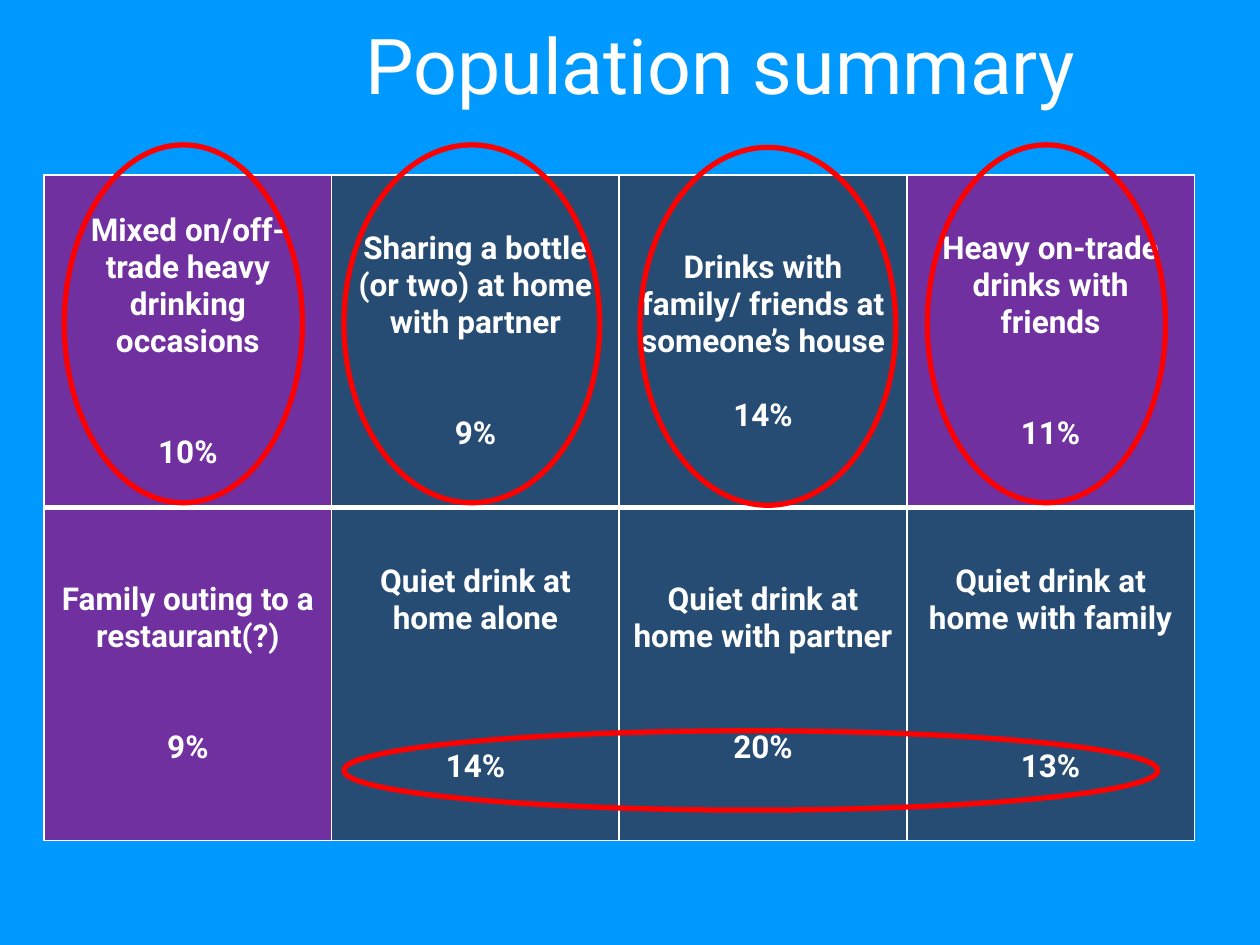
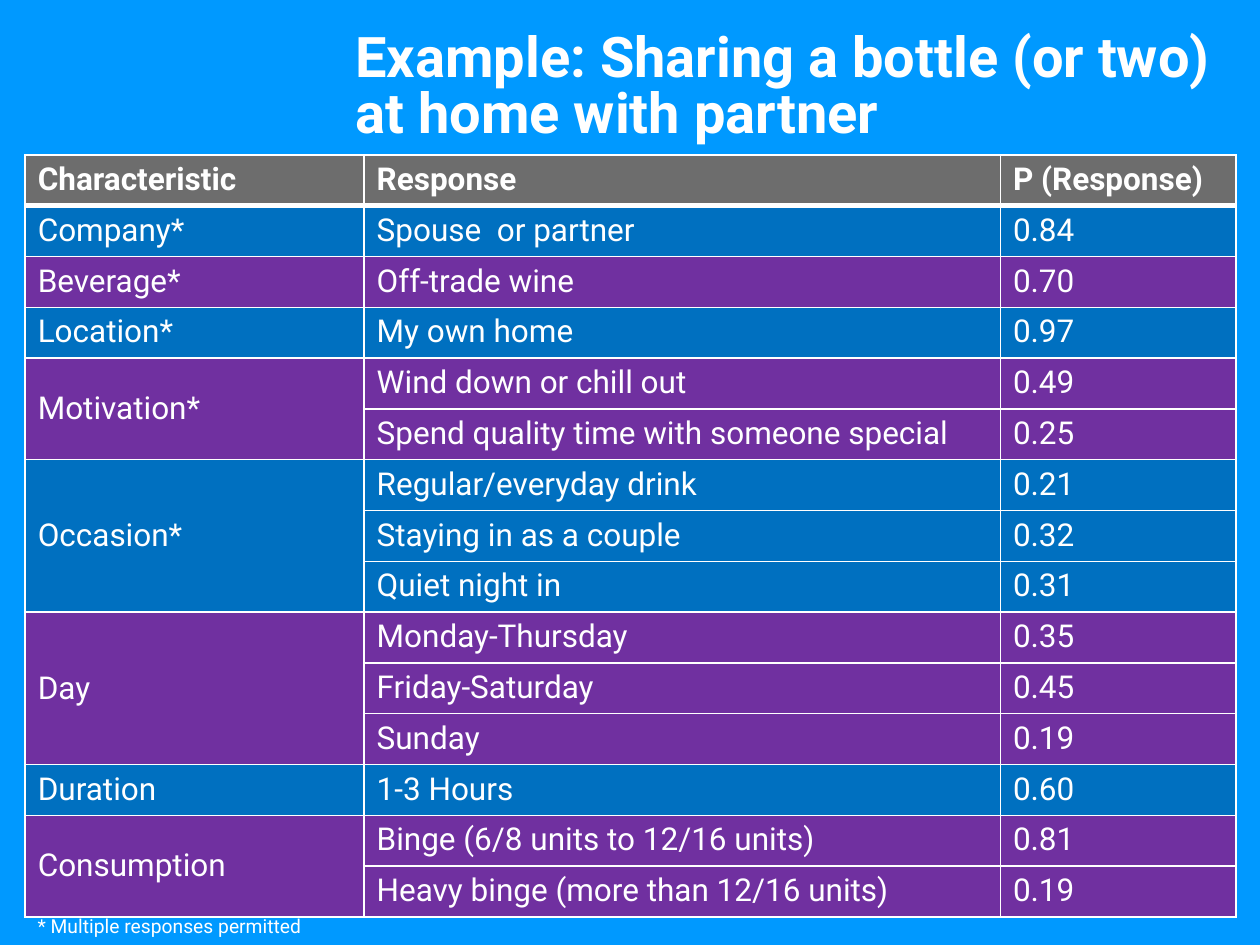
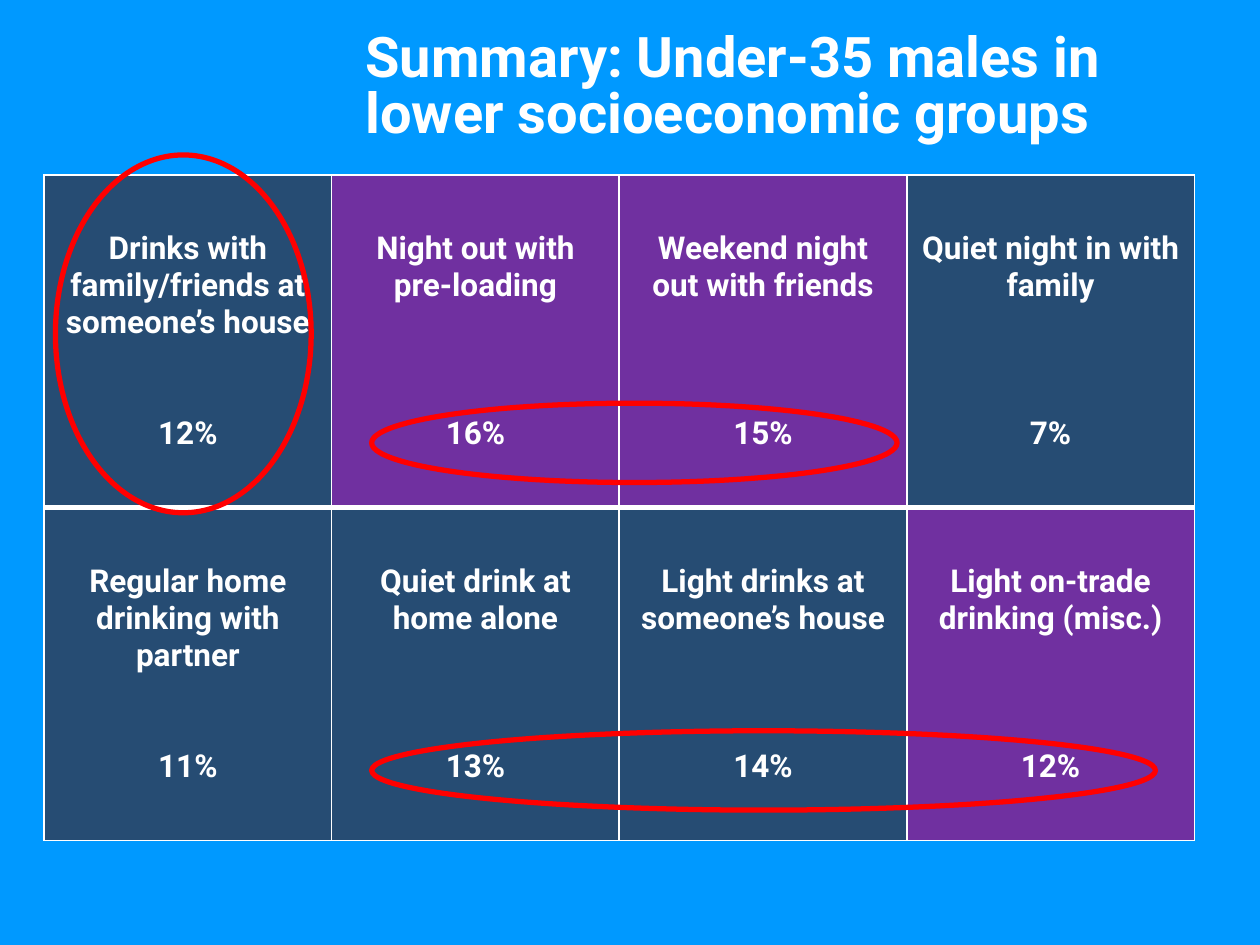
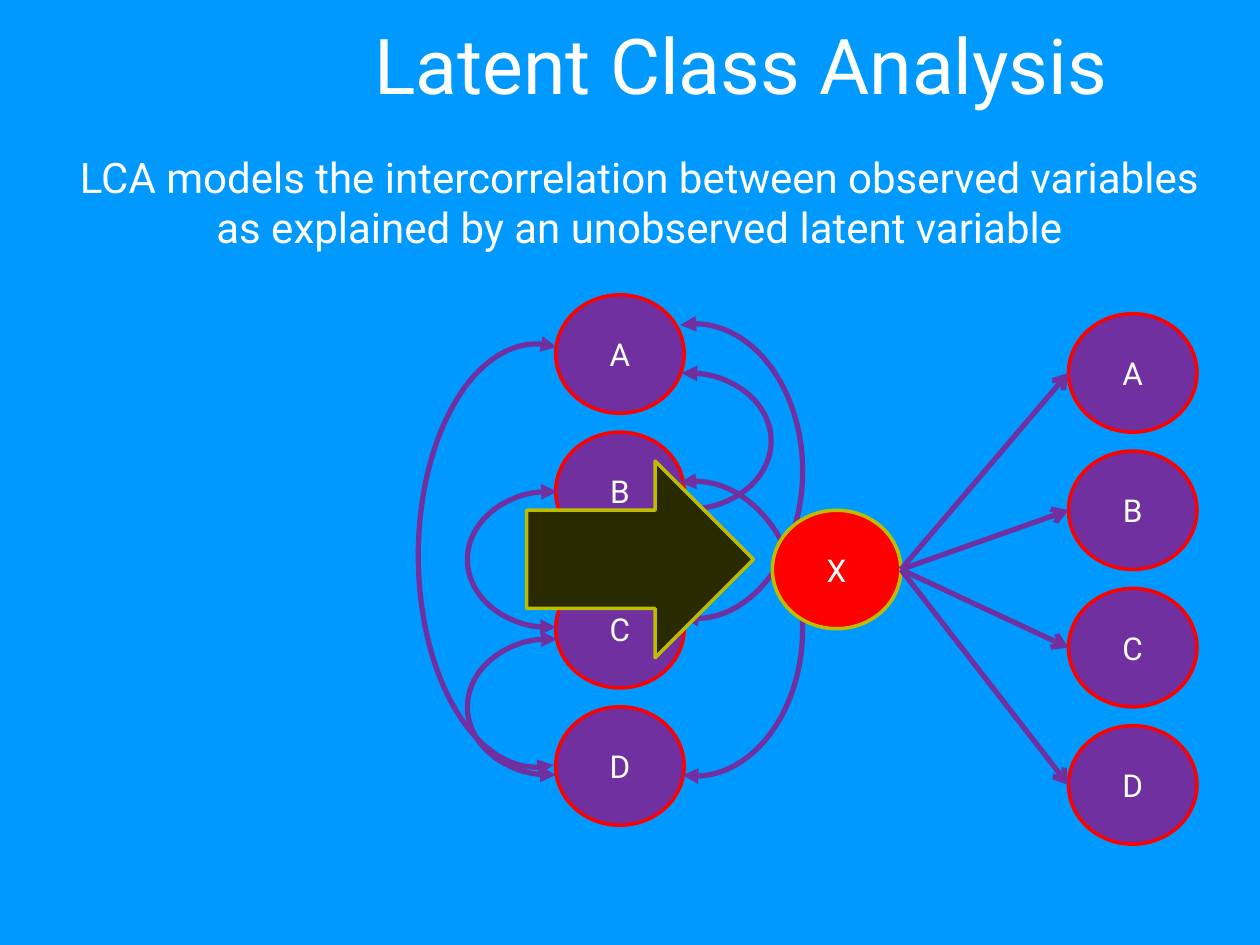
import lxml.etree
import pptx
import pptx.dml.color
import pptx.enum.shapes
import pptx.enum.text
import pptx.oxml.ns
import pptx.util

RGBColor = pptx.dml.color.RGBColor
SKY = RGBColor(0x00, 0x99, 0xFF)
WHITE = RGBColor(0xFF, 0xFF, 0xFF)
PURPLE = RGBColor(0x70, 0x30, 0xA0)
NAVY = RGBColor(0x26, 0x4C, 0x73)
BLUE = RGBColor(0x00, 0x70, 0xC0)
GREY = RGBColor(0x6D, 0x6D, 0x6D)
RED = RGBColor(0xFF, 0x00, 0x00)
OLIVE = RGBColor(0xBD, 0xBD, 0x00)
DARK_OLIVE = RGBColor(0x2A, 0x2A, 0x00)
FONT = "Roboto"
BODY_SIZE = 18
LINE_PITCH = 21.1

SHAPE = pptx.enum.shapes.MSO_SHAPE
ALIGN = pptx.enum.text.PP_ALIGN
ANCHOR = pptx.enum.text.MSO_ANCHOR
qn = pptx.oxml.ns.qn

prs = pptx.Presentation()
prs.slide_width = pptx.util.Inches(10)
prs.slide_height = pptx.util.Inches(7.5)
UNIT = prs.slide_width // 1000
background = prs.slide_master.background.fill
background.solid()
background.fore_color.rgb = SKY


def write(paragraph, text, size=BODY_SIZE, bold=False, align=ALIGN.LEFT):
    paragraph.alignment = align
    run = paragraph.add_run()
    run.text = text
    run.font.name = FONT
    run.font.size = pptx.util.Pt(size)
    run.font.bold = bold
    run.font.color.rgb = WHITE


def draw(slide, kind, area, line, width, fill=None):
    shape = slide.shapes.add_shape(kind, *(v * UNIT for v in area))
    shape.shadow.inherit = False
    shape.line.color.rgb = line
    shape.line.width = pptx.util.Pt(width)
    if fill is None:
        shape.fill.background()
    else:
        shape.fill.solid()
        shape.fill.fore_color.rgb = fill
    return shape


titles = [
    ("Population summary", 44, 280, 693),
    ("Example: Sharing a bottle (or two) at home with partner", 32, 272, 701),
    ("Summary: Under-35 males in lower socioeconomic groups", 32, 280, 693),
    ("Latent Class Analysis", 44, 287, 650),
]
slides = []
for heading, size, left, width in titles:
    slide = prs.slides.add_slide(prs.slide_layouts[5])
    title = slide.shapes.title
    title.left, title.top, title.width, title.height = (v * UNIT for v in (left, 21, width, 83))
    title.text_frame.word_wrap = True
    title.text_frame.auto_size = pptx.enum.text.MSO_AUTO_SIZE.NONE
    title.text_frame.vertical_anchor = ANCHOR.TOP
    title.text_frame.paragraphs[0].line_spacing = 0.83
    write(title.text_frame.paragraphs[0], heading, size, size == 32)
    slides.append(slide)
population, example, young_males, latent = slides
tables = []

summaries = [
    (population, [
        ("Mixed on/off-trade heavy drinking occasions", "10%", 2, PURPLE),
        ("Sharing a bottle (or two) at home with partner", "9%", 2, NAVY),
        ("Drinks with family/ friends at someone’s house", "14%", 1, NAVY),
        ("Heavy on-trade drinks with friends", "11%", 2, PURPLE),
        ("Family outing to a restaurant(?)", "9%", 2, PURPLE),
        ("Quiet drink at home alone", "14%", 3, NAVY),
        ("Quiet drink at home with partner", "20%", 2, NAVY),
        ("Quiet drink at home with family", "13%", 3, NAVY),
    ], [(51, 115, 189, 284), (273, 115, 203, 284), (273, 580, 646, 63),
        (736, 115, 189, 284), (508, 117, 203, 284)]),
    (young_males, [
        ("Drinks with family/friends at someone’s house", "12%", 2, NAVY),
        ("Night out with pre-loading", "16%", 3, PURPLE),
        ("Weekend night out with friends", "15%", 3, PURPLE),
        ("Quiet night in with family", "7%", 3, NAVY),
        ("Regular home drinking with partner", "11%", 2, NAVY),
        ("Quiet drink at home alone", "13%", 3, NAVY),
        ("Light drinks at someone’s house", "14%", 3, NAVY),
        ("Light on-trade drinking (misc.)", "12%", 3, PURPLE),
    ], [(44, 123, 203, 284), (295, 320, 417, 63), (295, 580, 622, 63)]),
]
for slide, occasions, rings in summaries:
    occasion_grid = slide.shapes.add_table(2, 4, *(v * UNIT for v in (35, 139, 913, 528))).table
    tables.append(occasion_grid)
    for index, (occasion, share, blank_lines, fill) in enumerate(occasions):
        cell = occasion_grid.cell(*divmod(index, 4))
        cell.vertical_anchor = ANCHOR.MIDDLE
        cell.fill.solid()
        cell.fill.fore_color.rgb = fill
        write(cell.text_frame.paragraphs[0], occasion, bold=True, align=ALIGN.CENTER)
        share_line = cell.text_frame.add_paragraph()
        share_line.space_before = pptx.util.Pt(blank_lines * LINE_PITCH)
        write(share_line, share, bold=True, align=ALIGN.CENTER)
    for ring in rings:
        draw(slide, SHAPE.OVAL, ring, RED, 3)

characteristics = [
    ("Company*", [("Spouse  or partner", "0.84")]),
    ("Beverage*", [("Off-trade wine", "0.70")]),
    ("Location*", [("My own home", "0.97")]),
    ("Motivation*", [("Wind down or chill out", "0.49"),
                     ("Spend quality time with someone special", "0.25")]),
    ("Occasion*", [("Regular/everyday drink", "0.21"),
                   ("Staying in as a couple", "0.32"),
                   ("Quiet night in", "0.31")]),
    ("Day", [("Monday-Thursday", "0.35"), ("Friday-Saturday", "0.45"), ("Sunday", "0.19")]),
    ("Duration", [("1-3 Hours", "0.60")]),
    ("Consumption", [("Binge (6/8 units to 12/16 units)", "0.81"),
                     ("Heavy binge (more than 12/16 units)", "0.19")]),
]
rows = [("Characteristic", "Response", "P (Response)", GREY)]
spans = []
for index, (characteristic, responses) in enumerate(characteristics):
    spans.append((len(rows), len(rows) + len(responses) - 1))
    for position, (response, probability) in enumerate(responses):
        label = characteristic if position == 0 else ""
        rows.append((label, response, probability, PURPLE if index % 2 else BLUE))

response_table = example.shapes.add_table(len(rows), 3, *(v * UNIT for v in (20, 123, 961, 605))).table
tables.append(response_table)
for column, width in zip(response_table.columns, (269, 505, 187)):
    column.width = width * UNIT
for row, (*entries, fill) in enumerate(rows):
    for column, entry in enumerate(entries):
        cell = response_table.cell(row, column)
        cell.fill.solid()
        cell.fill.fore_color.rgb = fill
        if entry:
            write(cell.text_frame.paragraphs[0], entry, bold=row == 0)
for first, last in spans:
    if last > first:
        response_table.cell(first, 0).merge(response_table.cell(last, 0))
        response_table.cell(first, 0).vertical_anchor = ANCHOR.MIDDLE

for table in tables:
    for row in range(len(table.rows)):
        for column in range(len(table.columns)):
            properties = table.cell(row, column)._tc.get_or_add_tcPr()
            for order, side in enumerate("LRTB"):
                thick = (row, side) in ((0, "B"), (1, "T"))
                border = lxml.etree.Element(qn("a:ln" + side), w=str(pptx.util.Pt(3 if thick else 1)))
                paint = lxml.etree.SubElement(border, qn("a:solidFill"))
                lxml.etree.SubElement(paint, qn("a:srgbClr"), val=str(WHITE))
                properties.insert(order, border)

captions = [
    (example, (20, 721, 614, 29), "* Multiple responses permitted", 11, ALIGN.LEFT),
    (latent, (51, 115, 913, 91),
     "LCA models the intercorrelation between observed variables "
     "as explained by an unobserved latent variable", 24, ALIGN.CENTER),
]
for slide, area, caption, size, align in captions:
    frame = slide.shapes.add_textbox(*(v * UNIT for v in area)).text_frame
    frame.word_wrap = True
    write(frame.paragraphs[0], caption, size, align=align)

NODE_WIDTH, NODE_HEIGHT, NODE_STEP = 102, 94, 109
observed = [("A", 0), ("B", 1), ("C", 2), ("D", 3)]
for letter, level in observed:
    node = draw(latent, SHAPE.OVAL, (441, 234 + level * NODE_STEP, NODE_WIDTH, NODE_HEIGHT), RED, 2, PURPLE)
    write(node.text_frame.paragraphs[0], letter, align=ALIGN.CENTER)

correlations = [
    ((332, 273, 188, 336), True),
    ((465, 257, 172, 234), False),
    ((371, 390, 132, 108), True),
    ((371, 507, 132, 108), True),
    ((480, 296, 132, 108), False),
    ((465, 382, 172, 234), False),
]
for area, mirrored in correlations:
    arc = draw(latent, SHAPE.ARC, area, PURPLE, 3)
    arc.adjustments[0] = 158.74
    arc.adjustments[1] = 56.72
    properties = arc._element.spPr
    if mirrored:
        properties.find(qn("a:xfrm")).set("flipH", "1")
    for end in ("a:headEnd", "a:tailEnd"):
        lxml.etree.SubElement(properties.find(qn("a:ln")), qn(end), type="triangle")

draw(latent, SHAPE.RIGHT_ARROW, (418, 366, 180, 156), OLIVE, 2, DARK_OLIVE)

explained = [("X", 613, 405, OLIVE, RED)]
explained += [(letter, 848, 249 + level * NODE_STEP, RED, PURPLE) for letter, level in observed]
for letter, left, top, outline, fill in explained:
    node = draw(latent, SHAPE.OVAL, (left, top, NODE_WIDTH, NODE_HEIGHT), outline, 2, fill)
    write(node.text_frame.paragraphs[0], letter, align=ALIGN.CENTER)

for letter, left, top, outline, fill in explained[1:]:
    ends = (613 + NODE_WIDTH, 405 + NODE_HEIGHT // 2, left, top + NODE_HEIGHT // 2)
    effect = latent.shapes.add_connector(
        pptx.enum.shapes.MSO_CONNECTOR.STRAIGHT, *(v * UNIT for v in ends))
    effect.line.color.rgb = PURPLE
    effect.line.width = pptx.util.Pt(3)
    properties = effect._element.spPr
    lxml.etree.SubElement(properties.find(qn("a:ln")), qn("a:tailEnd"), type="arrow")
    lxml.etree.SubElement(properties, qn("a:effectLst"))

prs.save("out.pptx")
